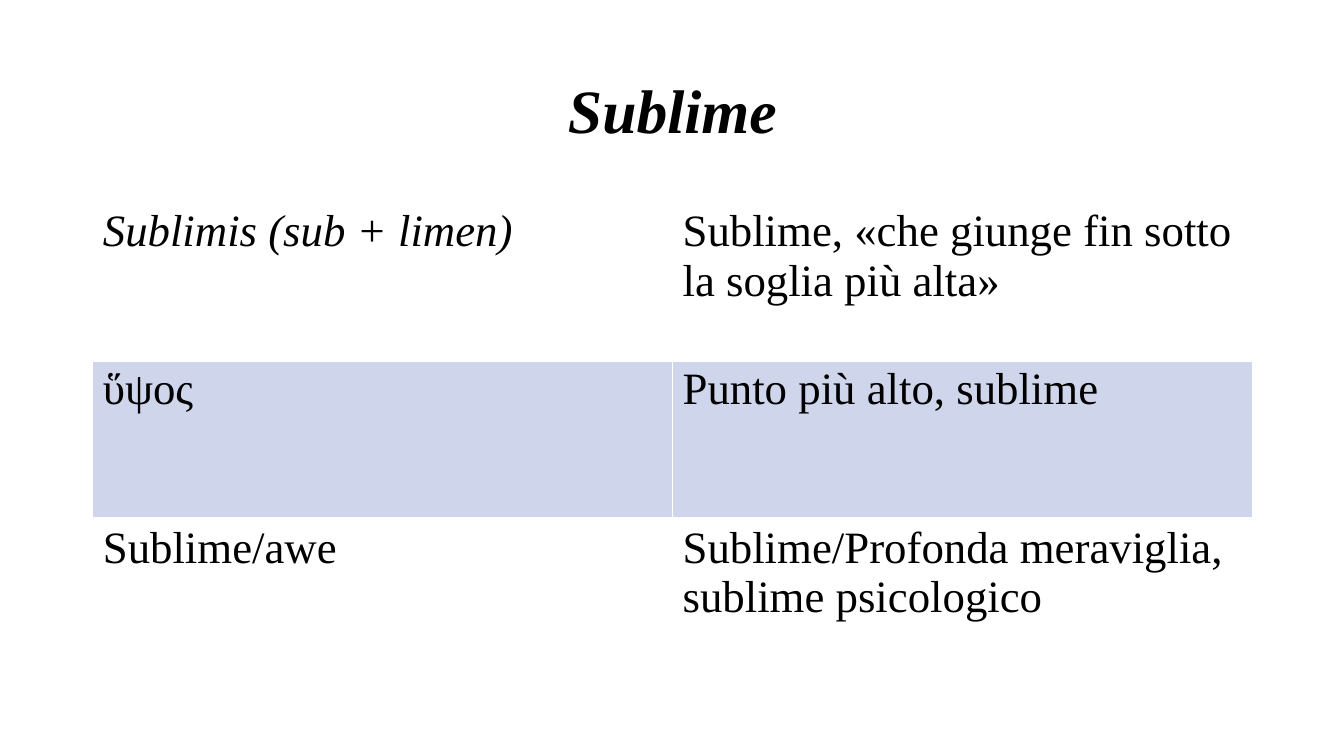
from lxml.etree import SubElement
from pptx import Presentation
from pptx.dml.color import RGBColor
from pptx.enum.text import MSO_ANCHOR, PP_ALIGN
from pptx.oxml.ns import qn
from pptx.util import Inches, Pt

BLACK = RGBColor(0x00, 0x00, 0x00)
WHITE = RGBColor(0xFF, 0xFF, 0xFF)
BAND = RGBColor(0xCF, 0xD5, 0xEA)
FONT = "Times New Roman"

LEFT, WIDTH = Inches(0.92), Inches(11.5)
ROW_HEIGHT = Inches(1.57)

# term, meaning, term in italics, row fill
GLOSSARY = [
    ("Sublimis (sub + limen)", "Sublime, «che giunge fin sotto la soglia più alta»", True, None),
    ("ὕψος", "Punto più alto, sublime", False, BAND),
    ("Sublime/awe", "Sublime/Profonda meraviglia, sublime psicologico", False, None),
]


def add_run(paragraph, text, size, bold=False, italic=False):
    run = paragraph.add_run()
    run.text = text
    font = run.font
    font.name, font.size = FONT, Pt(size)
    font.bold, font.italic = bold, italic
    font.color.rgb = BLACK


def set_borders(cell, widths):
    """Draw white cell borders; widths maps each side (L, R, T, B) to points."""
    properties = cell._tc.get_or_add_tcPr()
    for side, width in widths.items():
        line = SubElement(properties, qn(f"a:ln{side}"), w=str(Pt(width)))
        fill = SubElement(line, qn("a:solidFill"))
        SubElement(fill, qn("a:srgbClr"), val=str(WHITE))


def add_title(slide, text):
    title = slide.shapes.title
    title.left, title.top = LEFT, Inches(0.4)
    title.width, title.height = WIDTH, Inches(1.45)
    title.text_frame.vertical_anchor = MSO_ANCHOR.MIDDLE
    paragraph = title.text_frame.paragraphs[0]
    paragraph.alignment = PP_ALIGN.CENTER
    paragraph.line_spacing = 0.9
    add_run(paragraph, text, 44, bold=True, italic=True)


def add_glossary(slide, entries):
    table = slide.shapes.add_table(
        len(entries), 2, LEFT, Inches(2), WIDTH, ROW_HEIGHT * len(entries)
    ).table
    table.first_row = False
    table.horz_banding = False
    for row, (term, meaning, italic_term, band) in enumerate(entries):
        widths = {"L": 1, "R": 1, "T": 3 if row == 1 else 1, "B": 3 if row == 0 else 1}
        for column, (text, italic) in enumerate([(term, italic_term), (meaning, False)]):
            cell = table.cell(row, column)
            set_borders(cell, widths)
            if band is None:
                cell.fill.background()
            else:
                cell.fill.solid()
                cell.fill.fore_color.rgb = band
            add_run(cell.text_frame.paragraphs[0], text, 32, italic=italic)


def main():
    presentation = Presentation()
    presentation.slide_width = Inches(13.33)
    presentation.slide_height = Inches(7.5)
    slide = presentation.slides.add_slide(presentation.slide_layouts[5])
    add_title(slide, "Sublime")
    add_glossary(slide, GLOSSARY)
    presentation.save("out.pptx")


if __name__ == "__main__":
    main()
